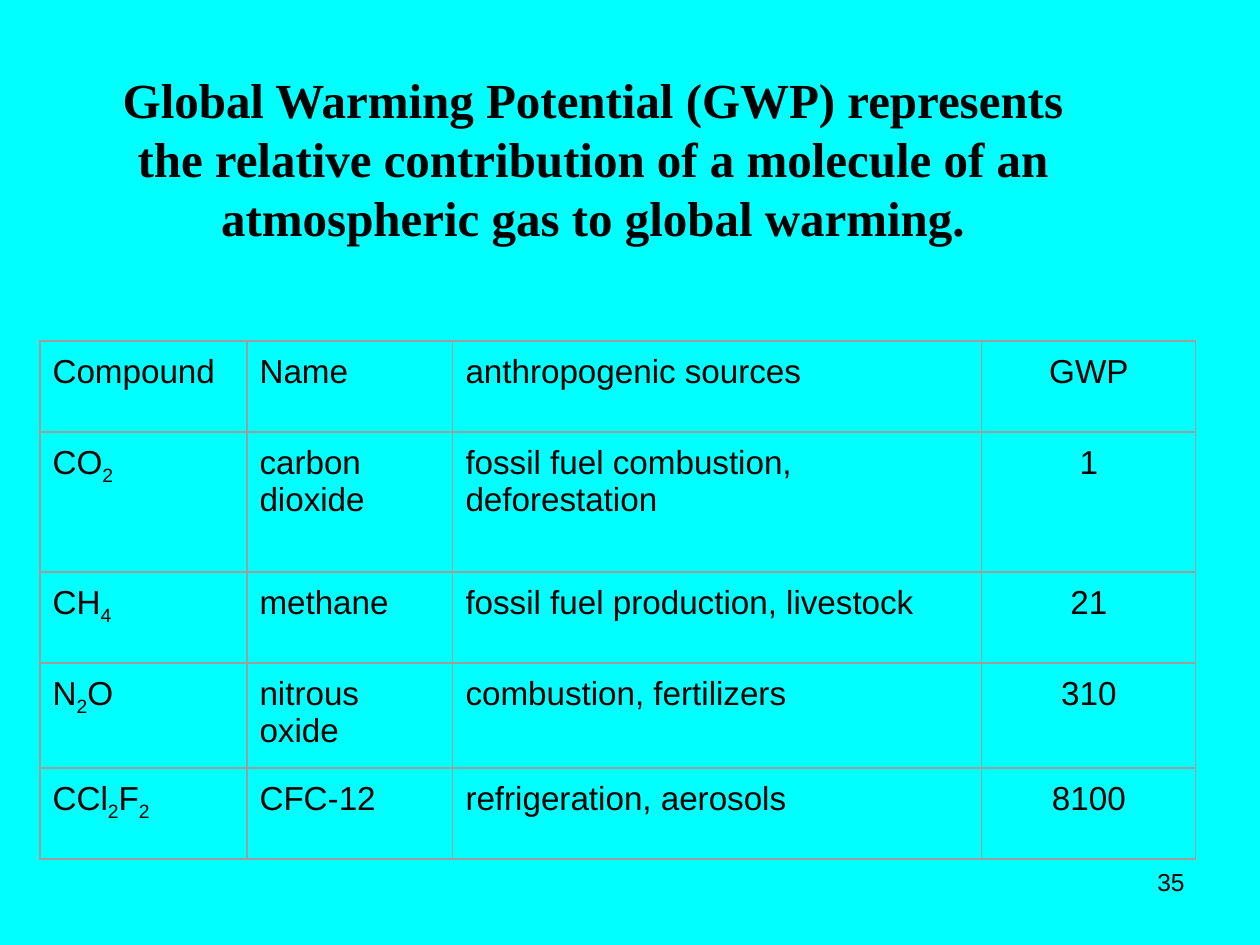
from dataclasses import dataclass
from lxml import etree
from pptx import Presentation
from pptx import util as u
from pptx.dml.color import RGBColor
from pptx.enum import text as t
from pptx.oxml import ns

SCALE = 914400 // 126


def px(n):
    return u.Emu(n * SCALE)


@dataclass(frozen=True)
class Theme:
    back: str = "00FFFF"
    ink: str = "000000"
    rule: str = "9E9E9E"
    serif: str = "Times New Roman"
    sans: str = "Arial"
    title: int = 28
    body: int = 19
    small: int = 14


def write(frame, words, size, font, ink, bold=False,
          align=t.PP_ALIGN.LEFT, subs=False):
    para = frame.paragraphs[0]
    para.alignment = align
    parts = words.split("_") if subs else [words]
    for i, part in enumerate(parts):
        run = para.add_run()
        run.text = part
        run.font.size = u.Pt(size)
        run.font.name = font
        run.font.bold = bold
        run.font.color.rgb = RGBColor.from_string(ink)
        if i % 2:
            run.font._element.set("baseline", "-25000")


class Deck:
    def __init__(self, theme):
        self.theme = theme
        self.show = Presentation()
        self.show.slide_width = px(1260)
        self.show.slide_height = px(945)
        self.slide = self.show.slides.add_slide(self.show.slide_layouts[6])
        fill = self.slide.background.fill
        fill.solid()
        fill.fore_color.rgb = RGBColor.from_string(theme.back)

    def label(self, words, box, anchor=t.MSO_ANCHOR.TOP, **look):
        frame = self.slide.shapes.add_textbox(*map(px, box)).text_frame
        frame.word_wrap = True
        frame.vertical_anchor = anchor
        write(frame, words, ink=self.theme.ink, **look)

    def border(self, cell):
        props = cell._tc.get_or_add_tcPr()
        for i, side in enumerate(("lnL", "lnR", "lnT", "lnB")):
            line = etree.Element(ns.qn("a:" + side), w=str(u.Pt(0.75)))
            fill = etree.SubElement(line, ns.qn("a:solidFill"))
            etree.SubElement(fill, ns.qn("a:srgbClr"), val=self.theme.rule)
            props.insert(i, line)

    def table(self, rows, left, top, widths, heights):
        look = self.theme
        grid = self.slide.shapes.add_table(
            len(rows), len(widths), px(left), px(top),
            px(sum(widths)), px(sum(heights))).table
        grid.first_row = grid.horz_banding = False
        for col, width in zip(grid.columns, widths):
            col.width = px(width)
        for row, height, words in zip(grid.rows, heights, rows):
            row.height = px(height)
            for i, (cell, word) in enumerate(zip(row.cells, words)):
                cell.margin_left = cell.margin_right = u.Inches(0.1)
                cell.margin_top = cell.margin_bottom = u.Inches(0.1)
                cell.fill.background()
                self.border(cell)
                last = i == len(widths) - 1
                align = t.PP_ALIGN.CENTER if last else t.PP_ALIGN.LEFT
                write(cell.text_frame, word, look.body, look.sans, look.ink,
                      align=align, subs=True)


def main():
    theme = Theme()
    deck = Deck(theme)
    deck.label(
        "Global Warming Potential (GWP) represents the relative contribution "
        "of a molecule of an atmospheric gas to global warming.",
        (94, 63, 998, 190), anchor=t.MSO_ANCHOR.MIDDLE, size=theme.title,
        font=theme.serif, bold=True, align=t.PP_ALIGN.CENTER)
    rows = [
        ("Compound", "Name", "anthropogenic sources", "GWP"),
        ("CO_2_", "carbon dioxide",
         "fossil fuel combustion, deforestation", "1"),
        ("CH_4_", "methane", "fossil fuel production, livestock", "21"),
        ("N_2_O", "nitrous oxide", "combustion, fertilizers", "310"),
        ("CCl_2_F_2_", "CFC-12", "refrigeration, aerosols", "8100"),
    ]
    deck.table(rows, 40, 341, (207, 206, 529, 214), (91, 140, 91, 91, 91))
    deck.label("35", (903, 861, 294, 65), size=theme.small,
               font=theme.sans, align=t.PP_ALIGN.RIGHT)
    deck.show.save("out.pptx")


if __name__ == "__main__":
    main()
